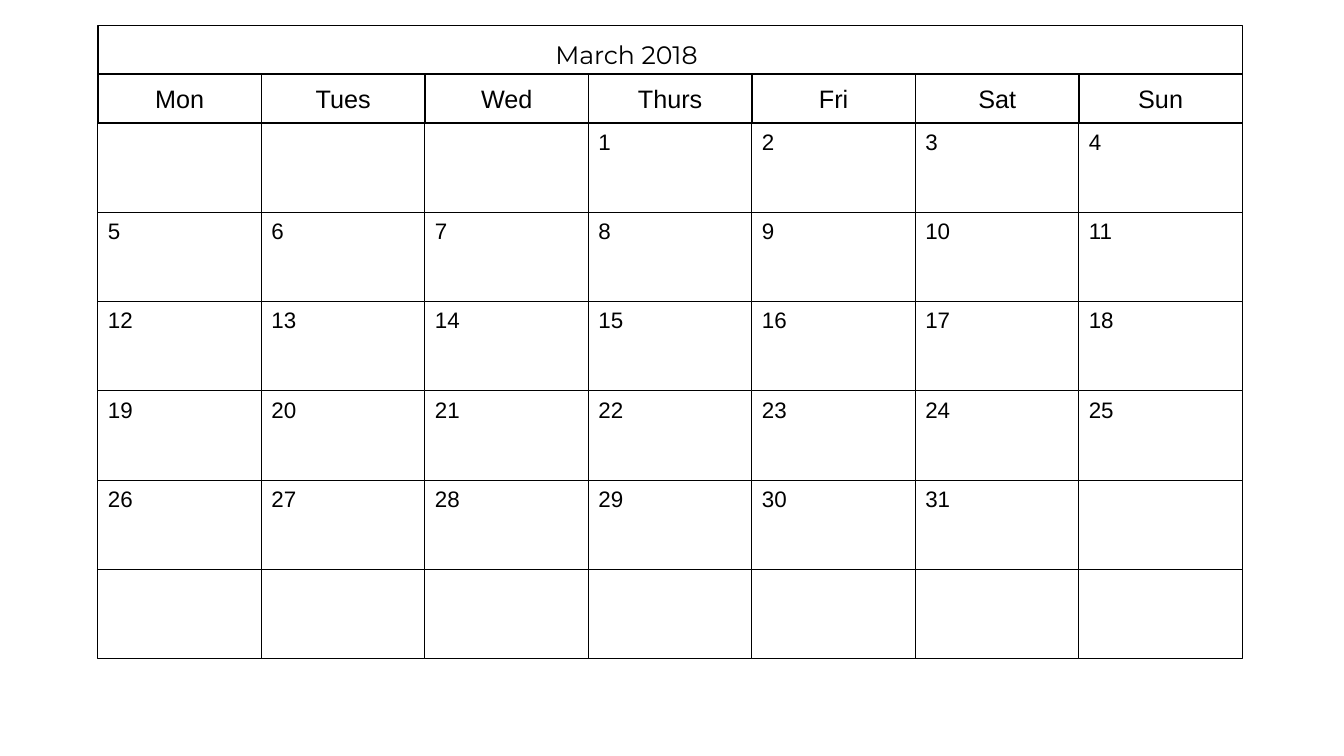
from dataclasses import dataclass

from pptx import Presentation
from pptx.dml.color import RGBColor
from pptx.enum.shapes import MSO_SHAPE
from pptx.enum.text import MSO_ANCHOR, MSO_AUTO_SIZE, PP_ALIGN
from pptx.util import Cm, Pt


@dataclass(frozen=True)
class Theme:
    ink: RGBColor = RGBColor(0, 0, 0)
    paper: RGBColor = RGBColor(255, 255, 255)
    title_font: str = "Montserrat"
    body_font: str = "Arial"
    heading_size: int = 18
    date_size: int = 16
    heading_line: float = 1
    date_line: float = 0.75


THEME = Theme()
WEEKDAYS = ["Mon", "Tues", "Wed", "Thurs", "Fri", "Sat", "Sun"]
WEEKS = 6
FIRST_DAY_COLUMN = 3
DAYS_IN_MONTH = 31
LEFT, BAND_TOP = 2.47, 0.64
DAY_WIDTH, DAY_HEIGHT, HEADING_HEIGHT = 4.12, 2.25, 1.23
WEEKDAY_TOP = BAND_TOP + HEADING_HEIGHT
DATES_TOP = WEEKDAY_TOP + HEADING_HEIGHT


def paint(shape):
    shape.fill.solid()
    shape.fill.fore_color.rgb = THEME.paper


def add_words(paragraph, words, font, size):
    run = paragraph.add_run()
    run.text = words
    run.font.name = font
    run.font.size = Pt(size)
    run.font.color.rgb = THEME.ink


def add_box(slide, left, top, width, height, line_width):
    box = slide.shapes.add_shape(
        MSO_SHAPE.RECTANGLE, Cm(left), Cm(top), Cm(width), Cm(height))
    box.shadow.inherit = False
    paint(box)
    box.line.color.rgb = THEME.ink
    box.line.width = Pt(line_width)
    return box


def add_month_band(slide):
    band = add_box(slide, LEFT, BAND_TOP, DAY_WIDTH * len(WEEKDAYS),
                   HEADING_HEIGHT, THEME.heading_line)
    band.fill.background()


def place_title(slide, month):
    title = slide.shapes.title
    title.left, title.top = Cm(13.74), Cm(0.86)
    title.width, title.height = Cm(4.6), Cm(1.02)
    paint(title)
    frame = title.text_frame
    frame.word_wrap = False
    frame.auto_size = MSO_AUTO_SIZE.SHAPE_TO_FIT_TEXT
    frame.vertical_anchor = MSO_ANCHOR.TOP
    heading = frame.paragraphs[0]
    heading.alignment = PP_ALIGN.LEFT
    add_words(heading, month, THEME.title_font, THEME.heading_size)


def add_weekday(slide, column, weekday):
    box = add_box(slide, LEFT + column * DAY_WIDTH, WEEKDAY_TOP,
                  DAY_WIDTH, HEADING_HEIGHT, THEME.heading_line)
    frame = box.text_frame
    frame.vertical_anchor = MSO_ANCHOR.MIDDLE
    frame.margin_top = frame.margin_bottom = Cm(0.05)
    heading = frame.paragraphs[0]
    heading.alignment = PP_ALIGN.CENTER
    add_words(heading, weekday, THEME.body_font, THEME.heading_size)


def add_date(slide, week, column):
    box = add_box(slide, LEFT + column * DAY_WIDTH,
                  DATES_TOP + week * DAY_HEIGHT,
                  DAY_WIDTH, DAY_HEIGHT, THEME.date_line)
    day = week * len(WEEKDAYS) + column - FIRST_DAY_COLUMN + 1
    if 1 <= day <= DAYS_IN_MONTH:
        box.text_frame.vertical_anchor = MSO_ANCHOR.TOP
        date = box.text_frame.paragraphs[0]
        date.alignment = PP_ALIGN.LEFT
        add_words(date, str(day), THEME.body_font, THEME.date_size)


def main():
    deck = Presentation()
    deck.slide_width, deck.slide_height = Cm(33.87), Cm(19.05)
    slide = deck.slides.add_slide(deck.slide_layouts.get_by_name("Title Only"))
    place_title(slide, "March 2018")
    add_month_band(slide)
    for column, weekday in reversed(list(enumerate(WEEKDAYS))):
        add_weekday(slide, column, weekday)
    for week in reversed(range(WEEKS)):
        for column in reversed(range(len(WEEKDAYS))):
            add_date(slide, week, column)
    deck.save("out.pptx")


if __name__ == "__main__":
    main()
